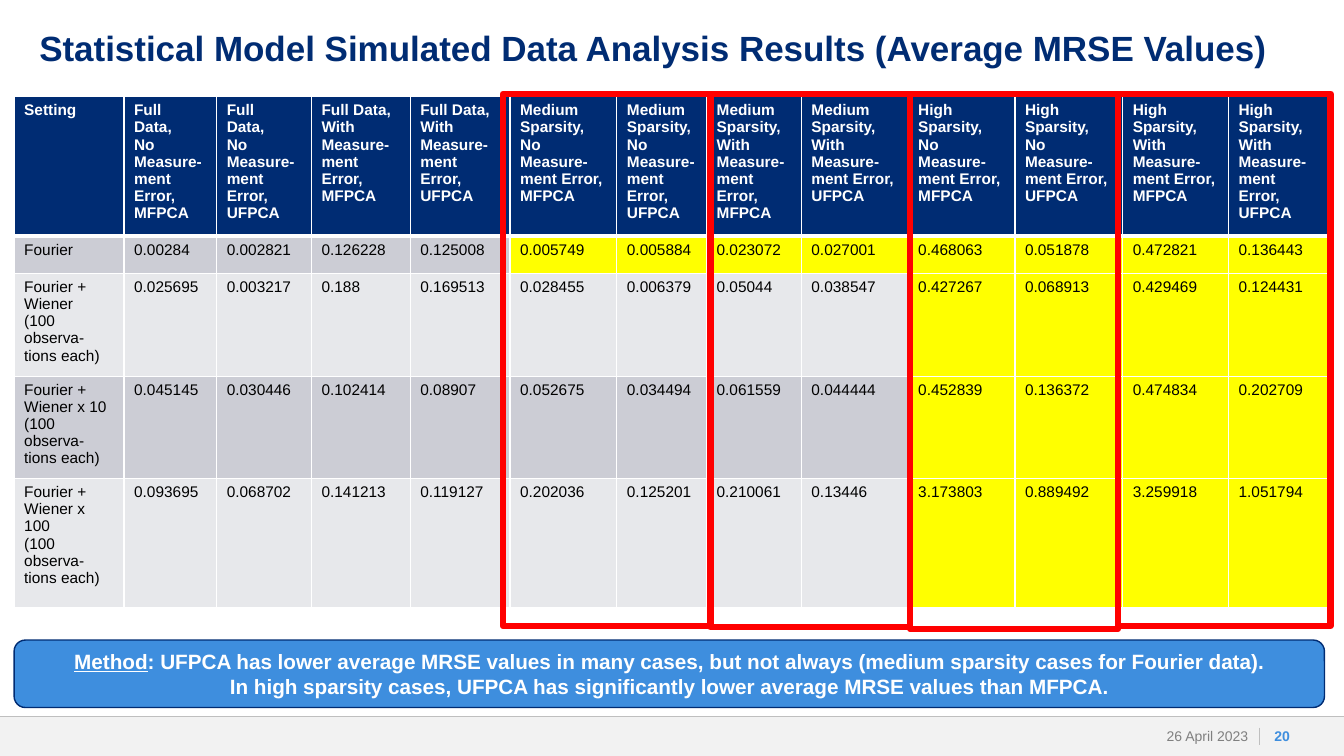
from dataclasses import dataclass
from itertools import product

from lxml import etree
from pptx import Presentation
from pptx.dml.color import RGBColor
from pptx.enum.shapes import MSO_CONNECTOR, MSO_SHAPE
from pptx.enum.text import MSO_ANCHOR, PP_ALIGN
from pptx.oxml.ns import qn
from pptx.util import Pt

LINE = MSO_CONNECTOR.STRAIGHT
RECT, ROUND = MSO_SHAPE.RECTANGLE, MSO_SHAPE.ROUNDED_RECTANGLE
TOP, MIDDLE = MSO_ANCHOR.TOP, MSO_ANCHOR.MIDDLE
LEFT, CENTER, RIGHT = PP_ALIGN.LEFT, PP_ALIGN.CENTER, PP_ALIGN.RIGHT


@dataclass(frozen=True)
class Theme:
    font: str = "Arial"
    navy: str = "002C73"
    blue: str = "3E8EDE"
    white: str = "FFFFFF"
    black: str = "000000"
    red: str = "FF0000"
    yellow: str = "FFFF00"
    dark: str = "CCCDD5"
    light: str = "E7E8EB"
    strip: str = "F2F2F2"
    rule: str = "BFBFBF"
    gray: str = "808080"
    title: float = 25
    note: float = 14.8
    cell: float = 11
    foot: float = 10


THEME = Theme()
WIDTH, HEIGHT = 960, 540
FOOT = 511.9
COLS = [78.5, 66.2, 67.7, 70.6, 71.3, 76.3, 64.1, 67.7, 76.3, 76.3, 77, 75.6, 72]
ROWS = [90.7, 26.6, 68.5, 68.5, 92.2]
FRAMES = [(359.3, 148.3, 380.2), (507.6, 142.6, 380.9),
          (650.2, 148.3, 382.3), (798.5, 151.9, 380.2)]
EACH = "\n(100 observa-tions each)"
DATA = [
    ["Fourier", "0.00284", "0.002821", "0.126228", "0.125008", "0.005749", "0.005884",
     "0.023072", "0.027001", "0.468063", "0.051878", "0.472821", "0.136443"],
    ["Fourier + Wiener" + EACH, "0.025695", "0.003217", "0.188", "0.169513", "0.028455",
     "0.006379", "0.05044", "0.038547", "0.427267", "0.068913", "0.429469", "0.124431"],
    ["Fourier + Wiener x 10" + EACH, "0.045145", "0.030446", "0.102414", "0.08907", "0.052675",
     "0.034494", "0.061559", "0.044444", "0.452839", "0.136372", "0.474834", "0.202709"],
    ["Fourier + Wiener x 100" + EACH, "0.093695", "0.068702", "0.141213", "0.119127", "0.202036",
     "0.125201", "0.210061", "0.13446", "3.173803", "0.889492", "3.259918", "1.051794"],
]
NOTE = (": UFPCA has lower average MRSE values in many cases, but not always "
        "(medium sparsity cases for Fourier data).\n"
        "In high sparsity cases, UFPCA has significantly lower average MRSE values than MFPCA.")


def write(frame, text, size, color, bold=False, align=LEFT, space=None, lead=""):
    """Fill a text frame, one paragraph per line, after an underlined lead."""
    for index, line in enumerate(text.split("\n")):
        para = frame.paragraphs[0] if index == 0 else frame.add_paragraph()
        para.alignment = align
        if space:
            para.line_spacing = space
        parts = [(lead, True), (line, False)] if lead and index == 0 else [(line, False)]
        for part, under in parts:
            run = para.add_run()
            run.text = part
            font = run.font
            font.name, font.size, font.bold = THEME.font, Pt(size), bold
            font.underline = under
            font.color.rgb = RGBColor.from_string(color)


class Page:
    """Draws styled elements on the current slide."""

    def __init__(self, slide, theme):
        self.shapes = slide.shapes
        self.theme = theme

    def shape(self, kind, box, fill=None, line=None, weight=1):
        item = self.shapes.add_shape(kind, *map(Pt, box))
        item.shadow.inherit = False
        if fill:
            item.fill.solid()
            item.fill.fore_color.rgb = RGBColor.from_string(fill)
        else:
            item.fill.background()
        if line:
            item.line.color.rgb = RGBColor.from_string(line)
            item.line.width = Pt(weight)
        else:
            item.line.fill.background()
        return item

    def rule(self, *ends):
        item = self.shapes.add_connector(LINE, *map(Pt, ends))
        item.line.color.rgb = RGBColor.from_string(self.theme.rule)
        item.line.width = Pt(0.5)
        etree.SubElement(item.element.spPr, qn("a:effectLst"))

    def label(self, box, text, anchor=MIDDLE, pad=0, **style):
        frame = self.shapes.add_textbox(*map(Pt, box)).text_frame
        frame.word_wrap = True
        frame.vertical_anchor = anchor
        frame.margin_left = frame.margin_right = Pt(pad)
        frame.margin_top = frame.margin_bottom = Pt(0)
        write(frame, text, **style)

    def border(self, cell, row):
        props = cell._tc.get_or_add_tcPr()
        for side in "LRTB":
            thick = (row, side) in ((0, "B"), (1, "T"))
            edge = etree.SubElement(props, qn("a:ln" + side), w=str(Pt(3 if thick else 1)))
            fill = etree.SubElement(edge, qn("a:solidFill"))
            etree.SubElement(fill, qn("a:srgbClr"), val=self.theme.white)

    def table(self, left, top, cols, rows, data):
        theme = self.theme
        box = map(Pt, (left, top, sum(cols), sum(rows)))
        grid = self.shapes.add_table(len(rows), len(cols), *box).table
        for col, width in zip(grid.columns, cols):
            col.width = Pt(width)
        for line, height in zip(grid.rows, rows):
            line.height = Pt(height)
        for row, col in product(range(len(rows)), range(len(cols))):
            head = row == 0
            if head:
                fill = theme.navy
            elif col >= 9 or (row == 1 and col >= 5):
                fill = theme.yellow
            else:
                fill = theme.dark if row % 2 else theme.light
            cell = grid.cell(row, col)
            self.border(cell, row)
            cell.fill.solid()
            cell.fill.fore_color.rgb = RGBColor.from_string(fill)
            write(cell.text_frame, data[row][col], size=theme.cell, bold=head,
                  color=theme.white if head else theme.black)


def main():
    deck = Presentation()
    deck.slide_width, deck.slide_height = Pt(WIDTH), Pt(HEIGHT)
    page = Page(deck.slides.add_slide(deck.slide_layouts[6]), THEME)

    page.shape(RECT, (0, FOOT, WIDTH, HEIGHT - FOOT), fill=THEME.strip)
    page.rule(0, FOOT, WIDTH, FOOT)
    page.rule(899.3, 519.8, 899.3, 532.1)
    page.label((790.6, FOOT, 108, HEIGHT - FOOT), "26 April 2023", pad=7.2,
               size=THEME.foot, color=THEME.gray, align=RIGHT)
    page.label((900.7, FOOT, 30.2, HEIGHT - FOOT), "20",
               size=THEME.foot, color=THEME.blue, bold=True, align=CENTER)
    page.label((28.1, 22.3, 887.8, 59.8),
               "Statistical Model Simulated Data Analysis Results (Average MRSE Values)",
               anchor=TOP, size=THEME.title, color=THEME.navy, bold=True, space=0.9)

    head = ["Setting"]
    levels = ("Full Data", "Medium Sparsity", "High Sparsity")
    for level, noise, model in product(levels, ("No", "With"), ("MFPCA", "UFPCA")):
        text = f"{level},\n{noise} Measure-ment Error,\n{model}"
        head.append(text.replace("Full Data,\nNo", "Full\nData,\nNo"))
    page.table(10.1, 69.1, COLS, ROWS, [head] + DATA)

    for left, width, height in FRAMES:
        page.shape(RECT, (left, 67, width, height), line=THEME.red, weight=4.5)

    note = page.shape(ROUND, (10.1, 457.2, 936, 48.2), fill=THEME.blue, line=THEME.navy)
    note.text_frame.word_wrap = True
    note.text_frame.vertical_anchor = MIDDLE
    write(note.text_frame, NOTE, size=THEME.note, color=THEME.white, bold=True,
          align=CENTER, lead="Method")
    deck.save("out.pptx")


if __name__ == "__main__":
    main()
